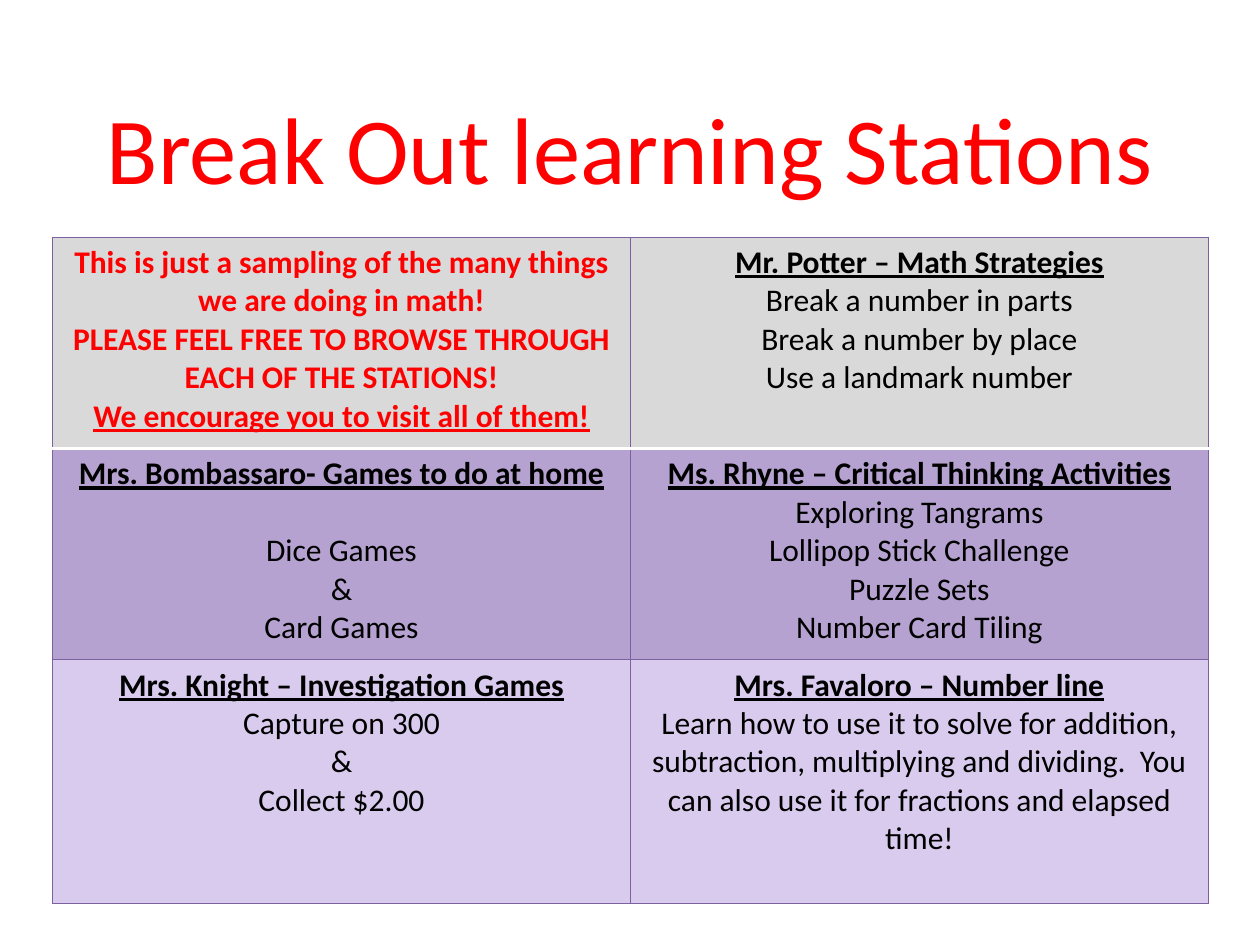
from dataclasses import dataclass

from lxml import etree
from pptx import Presentation
from pptx import util as u
from pptx.dml.color import RGBColor
from pptx.enum import text
from pptx.oxml import ns


@dataclass(frozen=True)
class Theme:
    font: str = "Calibri"
    title_size: float = 54
    body_size: float = 18
    red: str = "FF0000"
    black: str = "000000"
    border: str = "7D60A0"
    divider: str = "FFFFFF"
    row_fills: tuple[str, ...] = ("D9D9D9", "B5A2D0", "D9CBEE")
    border_width: float = 0.75
    divider_width: float = 2


@dataclass(frozen=True)
class Line:
    words: str
    bold: bool = False
    underline: bool = False
    color: str = "000000"
    space_before: float = 0


THEME = Theme()
COLUMN_WIDTH = u.Cm(11.65)
ROW_HEIGHTS = (u.Cm(4.26), u.Cm(4.26), u.Cm(4.91))


def station(heading: str, *activities: str, gap: float = 0) -> list[Line]:
    lines = [Line(heading, bold=True, underline=True)]
    return lines + [Line(activity, space_before=0 if index else gap)
                    for index, activity in enumerate(activities)]


STATIONS = (
    (
        [
            Line("This is just a sampling of the many things we are doing in math!", True, color=THEME.red),
            Line("PLEASE FEEL FREE TO BROWSE THROUGH EACH OF THE STATIONS!", True, color=THEME.red),
            Line("We encourage you to visit all of them!", True, True, THEME.red),
        ],
        station("Mr. Potter – Math Strategies", "Break a number in parts",
                "Break a number by place", "Use a landmark number"),
    ),
    (
        station("Mrs. Bombassaro- Games to do at home", "Dice Games", "&", "Card Games", gap=22),
        station("Ms. Rhyne – Critical Thinking Activities", "Exploring Tangrams",
                "Lollipop Stick Challenge", "Puzzle Sets", "Number Card Tiling"),
    ),
    (
        station("Mrs. Knight – Investigation Games", "Capture on 300", "&", "Collect $2.00"),
        station("Mrs. Favaloro – Number line",
                "Learn how to use it to solve for addition, subtraction, multiplying and dividing.  "
                "You can also use it for fractions and elapsed time!"),
    ),
)


def write(paragraph, words: str, *, size: float = THEME.body_size, color: str = THEME.black,
          bold: bool = False, underline: bool = False, space_before: float = 0) -> None:
    paragraph.alignment = text.PP_ALIGN.CENTER
    if space_before:
        paragraph.space_before = u.Pt(space_before)
    run = paragraph.add_run()
    run.text = words
    run.font.name = THEME.font
    run.font.size = u.Pt(size)
    run.font.bold = bold
    run.font.underline = underline
    run.font.color.rgb = RGBColor.from_string(color)


def set_border(cell, position: int, side: str, color: str, width: float) -> None:
    line = etree.Element(ns.qn(f"a:ln{side}"), w=str(u.Pt(width)))
    fill = etree.SubElement(line, ns.qn("a:solidFill"))
    etree.SubElement(fill, ns.qn("a:srgbClr"), val=color)
    cell._tc.get_or_add_tcPr().insert(position, line)


def fill_cell(cell, lines: list[Line], row: int) -> None:
    cell.fill.solid()
    cell.fill.fore_color.rgb = RGBColor.from_string(THEME.row_fills[row])
    divided_side = {0: "B", 1: "T"}.get(row)
    for position, side in enumerate("LRTB"):
        if side == divided_side:
            set_border(cell, position, side, THEME.divider, THEME.divider_width)
        else:
            set_border(cell, position, side, THEME.border, THEME.border_width)
    frame = cell.text_frame
    for index, line in enumerate(lines):
        paragraph = frame.add_paragraph() if index else frame.paragraphs[0]
        write(paragraph, line.words, bold=line.bold, underline=line.underline,
              color=line.color, space_before=line.space_before)


def add_title(slide, words: str) -> None:
    shape = slide.shapes.add_textbox(u.Cm(1.27), u.Cm(0.92), u.Cm(22.86), u.Cm(3.18))
    frame = shape.text_frame
    frame.word_wrap = True
    frame.vertical_anchor = text.MSO_ANCHOR.BOTTOM
    frame.margin_bottom = 0
    write(frame.paragraphs[0], words, size=THEME.title_size, color=THEME.red)


def add_stations(slide) -> None:
    table = slide.shapes.add_table(len(STATIONS), 2, u.Cm(1.06), u.Cm(4.78),
                                   2 * COLUMN_WIDTH, sum(ROW_HEIGHTS)).table
    for column in table.columns:
        column.width = COLUMN_WIDTH
    for row, cells in enumerate(STATIONS):
        table.rows[row].height = ROW_HEIGHTS[row]
        for column, lines in enumerate(cells):
            fill_cell(table.cell(row, column), lines, row)


def main() -> None:
    """Build the slide of break out learning stations."""
    presentation = Presentation()
    presentation.slide_width = u.Cm(25.4)
    presentation.slide_height = u.Cm(19.05)
    slide = presentation.slides.add_slide(presentation.slide_layouts[6])
    add_title(slide, "Break Out learning Stations")
    add_stations(slide)
    presentation.save("out.pptx")


if __name__ == "__main__":
    main()
